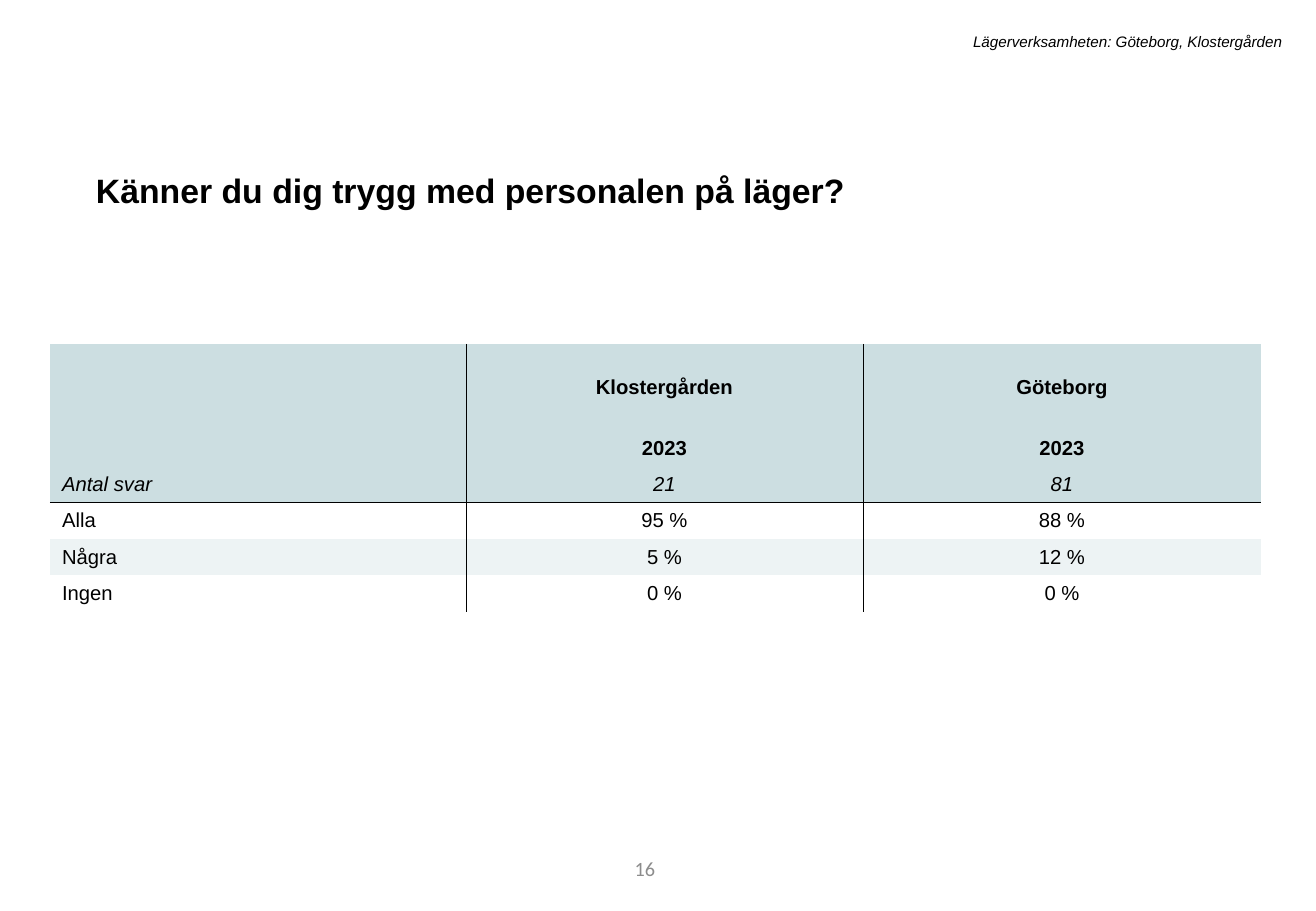
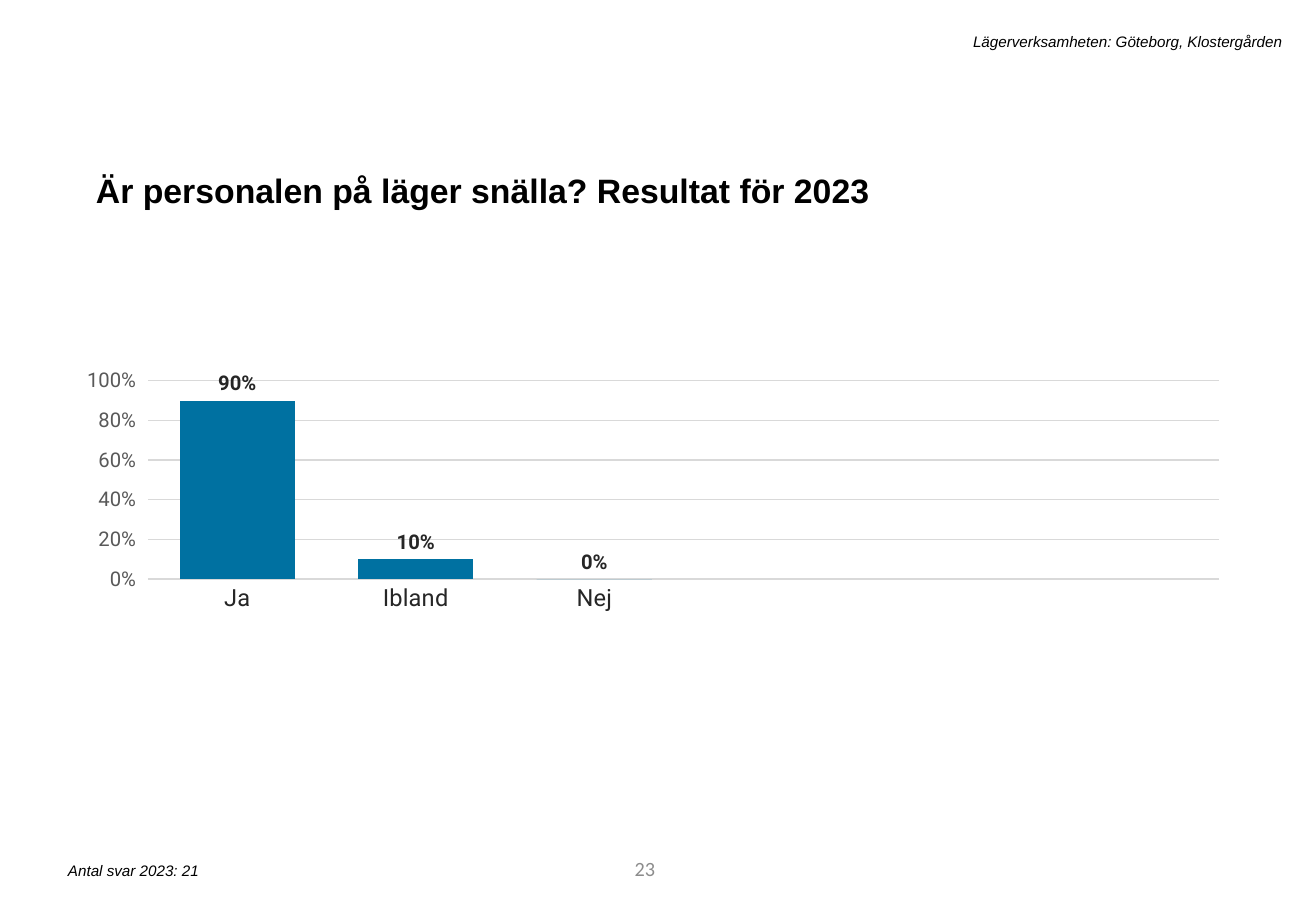
from lxml.etree import SubElement, fromstring
from pptx import Presentation
from pptx.chart.data import CategoryChartData
from pptx.dml.color import RGBColor
from pptx.enum.chart import XL_CHART_TYPE as ChartType
from pptx.enum.chart import XL_LABEL_POSITION as LabelPosition
from pptx.enum.chart import XL_TICK_MARK as TickMark
from pptx.enum.text import MSO_ANCHOR as Anchor
from pptx.enum.text import PP_ALIGN as Align
from pptx.oxml.ns import nsdecls, qn
from pptx.util import Pt

PX = 914400 / 121.5
BLACK = RGBColor(0x00, 0x00, 0x00)
PAGE_GRAY = RGBColor(0x8C, 0x8C, 0x8C)
HEADER_FILL = RGBColor(0xCC, 0xDE, 0xE1)
BAND_FILL = RGBColor(0xED, 0xF3, 0xF4)
BAR_BLUE = RGBColor(0x00, 0x71, 0xA1)
GRID_GRAY = RGBColor(0xD9, 0xD9, 0xD9)
AXIS_GRAY = RGBColor(0x59, 0x59, 0x59)
LABEL_DARK = RGBColor(0x26, 0x26, 0x26)


def px(*lengths):
    return [round(length * PX) for length in lengths]


def style_font(font, size, color=BLACK, name="Arial", bold=False, italic=False):
    font.name, font.size, font.color.rgb = name, Pt(size), color
    font.bold, font.italic = bold, italic


presentation = Presentation()
presentation.slide_width, presentation.slide_height = px(1316, 911)

TITLE = dict(size=20, bold=True)
NOTE = dict(size=9, italic=True)
PAGE_NUMBER = dict(size=12, color=PAGE_GRAY, name="Calibri")

pages = [
    ("16", "Känner du dig trygg med personalen på läger?", None),
    ("23", "Är personalen på läger snälla? Resultat för 2023", "Antal svar 2023: 21"),
]
slides = []
for number, title, footnote in pages:
    slide = presentation.slides.add_slide(presentation.slide_layouts[6])
    slides.append(slide)
    texts = [
        (number, (370, 844, 297, 49), Align.RIGHT, PAGE_NUMBER),
        (title, (84, 156, 1142, 57), Align.LEFT, TITLE),
        ("Lägerverksamheten: Göteborg, Klostergården", (217, 26, 1077, 30), Align.RIGHT, NOTE),
    ]
    if footnote:
        texts.append((footnote, (56, 855, 536, 30), Align.LEFT, NOTE))
    for text, box, alignment, style in texts:
        frame = slide.shapes.add_textbox(*px(*box)).text_frame
        frame.word_wrap = True
        paragraph = frame.paragraphs[0]
        paragraph.text, paragraph.alignment = text, alignment
        style_font(paragraph.font, **style)
        if style is TITLE:
            paragraph.line_spacing, paragraph.space_before = 1.2, Pt(10)
        if style is PAGE_NUMBER:
            frame.vertical_anchor = Anchor.MIDDLE

# Answer table
rows = [
    ("", "Klostergården", "Göteborg"),
    ("", "2023", "2023"),
    ("Antal svar", "21", "81"),
    ("Alla", "95 %", "88 %"),
    ("Några", "5 %", "12 %"),
    ("Ingen", "0 %", "0 %"),
]
column_widths = px(416, 397, 398)
row_heights = px(61, 61, 36, 36, 36, 36)
COUNT_ROW, LAST_COLUMN = 2, len(column_widths) - 1
table = slides[0].shapes.add_table(
    len(rows), len(column_widths), *px(50, 344, 1211, 266)).table
table.first_row = table.horz_banding = False
for column, width in zip(table.columns, column_widths):
    column.width = width
for row, height in zip(table.rows, row_heights):
    row.height = height

for row_index, row in enumerate(rows):
    for column_index, text in enumerate(row):
        cell = table.cell(row_index, column_index)
        cell.text = text
        cell.vertical_anchor = Anchor.BOTTOM if row_index < COUNT_ROW else Anchor.MIDDLE
        paragraph = cell.text_frame.paragraphs[0]
        paragraph.alignment = Align.CENTER if column_index else Align.LEFT
        style_font(paragraph.font, 12, bold=row_index < COUNT_ROW,
                   italic=row_index == COUNT_ROW)

        borders = {
            "a:lnL": column_index > 0,
            "a:lnR": column_index < LAST_COLUMN,
            "a:lnT": row_index == COUNT_ROW + 1,
            "a:lnB": row_index == COUNT_ROW,
        }
        properties = cell._tc.get_or_add_tcPr()
        for tag, visible in borders.items():
            line = SubElement(properties, qn(tag), w=str(Pt(0.25)))
            if visible:
                fill = SubElement(line, qn("a:solidFill"))
                SubElement(fill, qn("a:srgbClr"), val=str(BLACK))
            else:
                SubElement(line, qn("a:noFill"))

        if row_index <= COUNT_ROW or row_index % 2 == 0:
            cell.fill.solid()
            cell.fill.fore_color.rgb = HEADER_FILL if row_index <= COUNT_ROW else BAND_FILL
        else:
            cell.fill.background()

# Answer chart
chart_data = CategoryChartData(number_format="0%")
chart_data.categories = ["Ja", "Ibland", "Nej", "", "", ""]
chart_data.add_series("Series 1", [0.9, 0.1, 0, None, None, None])
chart = slides[1].shapes.add_chart(
    ChartType.COLUMN_CLUSTERED, *px(87, 307, 1142, 480), chart_data).chart
chart.has_legend = chart.has_title = False
style_font(chart.font, 10, name="Roboto")

category_axis = chart.category_axis
category_axis.major_tick_mark = TickMark.NONE
category_axis.format.line.color.rgb = GRID_GRAY
category_axis.format.line.width = Pt(0.75)
style_font(category_axis.tick_labels.font, 14, LABEL_DARK, "Roboto")

value_axis = chart.value_axis
value_axis.minimum_scale, value_axis.maximum_scale, value_axis.major_unit = 0, 1, 0.2
value_axis.major_tick_mark = TickMark.OUTSIDE
value_axis.format.line.fill.background()
value_axis.major_gridlines.format.line.color.rgb = GRID_GRAY
value_axis.major_gridlines.format.line.width = Pt(0.75)
value_axis.tick_labels.number_format = "0%"
value_axis.tick_labels.number_format_is_linked = False
style_font(value_axis.tick_labels.font, 12, AXIS_GRAY, "Roboto")

plot = chart.plots[0]
plot.gap_width = 55
plot.vary_by_categories = False
series = plot.series[0]
series.format.fill.solid()
series.format.fill.fore_color.rgb = BAR_BLUE
labels = series.data_labels
labels.show_value = True
labels.position = LabelPosition.OUTSIDE_END
labels.number_format, labels.number_format_is_linked = "0%", False
style_font(labels.font, 12, LABEL_DARK, "Roboto", bold=True)

plot_area = chart._chartSpace.chart.plotArea
for old_layout in plot_area.findall(qn("c:layout")):
    plot_area.remove(old_layout)
plot_area.insert(0, fromstring(
    f'<c:layout {nsdecls("c")}><c:manualLayout><c:layoutTarget val="inner"/>'
    '<c:xMode val="edge"/><c:yMode val="edge"/><c:x val="0.0525"/><c:y val="0.154"/>'
    '<c:w val="0.939"/><c:h val="0.413"/></c:manualLayout></c:layout>'))

presentation.save("out.pptx")
